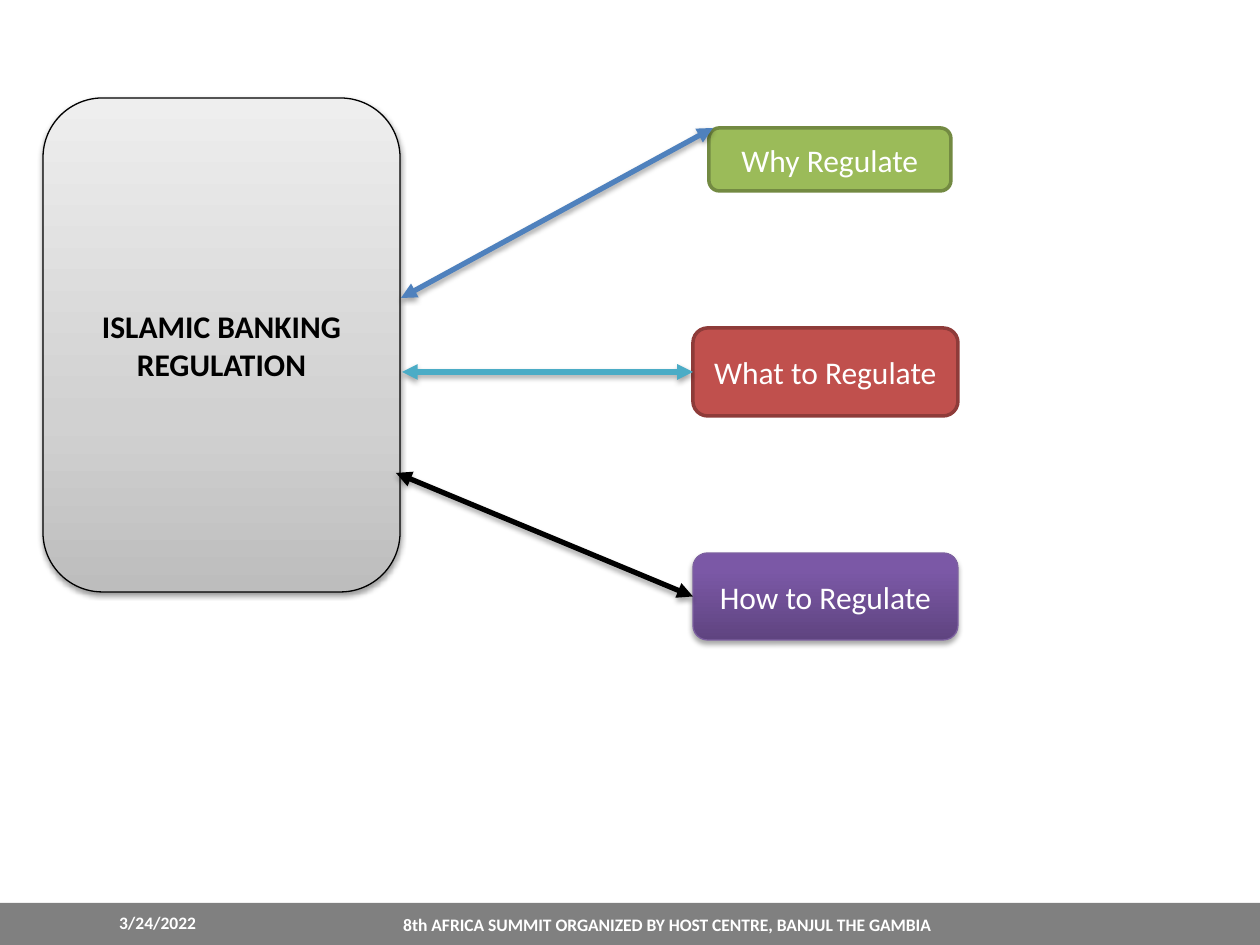
from copy import deepcopy

from lxml import etree
from pptx import Presentation
from pptx import util as u
from pptx.dml.color import RGBColor
from pptx.enum import shapes, text
from pptx.oxml.ns import qn

PX = 914400 // 126  # one px in EMU
FONT = "Calibri"
COLORS = {
    "white": "FFFFFF", "black": "000000", "footer": "808080",
    "green": "9BBB59", "green edge": "738A42",
    "red": "C0504D", "red edge": "8E3B39", "purple edge": "7D60A0",
    "blue": "4F81BD", "teal": "4BACC6",
}
# Gradients run from bottom to top: (position in percent, colour)
GREY_BLEND = [(0, "BDBDBD"), (35, "D1D1D1"), (100, "EEEEEE")]
PURPLE_BLEND = [(0, "5F4480"), (80, "7B58A6"), (100, "7C57A8")]

# Content: text, (left, top, width, height), fill, edge, edge pt, text colour, bold, shadow
TOPIC = ("ISLAMIC BANKING REGULATION", (43, 98, 357, 494), GREY_BLEND,
         "black", 0.75, "black", True, (38, 1.6))
QUESTIONS = [
    ("Why Regulate", (709, 128, 242, 63), "green", "green edge", 2, "white", False, None),
    ("What to Regulate", (693, 328, 265, 88), "red", "red edge", 2, "white", False, None),
    ("How to Regulate", (693, 553, 265, 87), PURPLE_BLEND, "purple edge", 0.75,
     "white", False, (35, 1.8)),
]
# Colour, start, end, index of the question joined at its left side
ARROWS = [
    ("blue", (401, 298), (713, 128), None),
    ("teal", (402, 372), (693, 372), 1),
    ("black", (396, 473), (693, 596), 2),
]
FOOTER_BAR = (0, 903, 1260, 42)
FOOTERS = [
    ("3/24/2022", (42, 906, 231, 32)),
    ("8th AFRICA SUMMIT ORGANIZED BY HOST CENTRE, BANJUL THE GAMBIA", (284, 908, 766, 29)),
]


def rgb(name):
    return RGBColor.from_string(COLORS.get(name, name))


def emu(lengths):
    return [length * PX for length in lengths]


def write(box, words, size, color, bold):
    frame = box.text_frame
    frame.word_wrap = True
    para = frame.paragraphs[0]
    para.alignment = text.PP_ALIGN.CENTER
    span = para.add_run()
    span.text = words
    span.font.name, span.font.size, span.font.bold = FONT, u.Pt(size), bold
    span.font.color.rgb = rgb(color)


def set_fill(box, fill):
    if isinstance(fill, str):
        box.fill.solid()
        box.fill.fore_color.rgb = rgb(fill)
        return
    box.fill.gradient()
    box.fill.gradient_angle = 90
    stop_list = box.fill.gradient_stops
    first = next(box._element.iter(qn("a:gs")))
    for _ in range(len(fill) - len(stop_list)):
        first.addnext(deepcopy(first))
    for stop, (position, color) in zip(box.fill.gradient_stops, fill):
        stop.position = position / 100
        stop.color.rgb = rgb(color)


def add_shadow(properties, opacity, distance):
    effects = properties.find(qn("a:effectLst"))
    if effects is None:
        effects = etree.SubElement(properties, qn("a:effectLst"))
    shadow = etree.SubElement(effects, qn("a:outerShdw"), blurRad=str(u.Pt(3.1)),
                              dist=str(u.Pt(distance)), dir="5400000", rotWithShape="0")
    color = etree.SubElement(shadow, qn("a:srgbClr"), val=COLORS["black"])
    etree.SubElement(color, qn("a:alpha"), val=str(opacity * 1000))


def add_box(page, words, place, fill, edge, weight, color, bold, shadow):
    box = page.shapes.add_shape(shapes.MSO_SHAPE.ROUNDED_RECTANGLE, *emu(place))
    box.shadow.inherit = False
    set_fill(box, fill)
    box.line.color.rgb = rgb(edge)
    box.line.width = u.Pt(weight)
    if shadow:
        add_shadow(box._element.spPr, *shadow)
    box.text_frame.vertical_anchor = text.MSO_ANCHOR.MIDDLE
    write(box, words, 18, color, bold)
    return box


def add_arrow(page, color, start, end, target):
    arrow = page.shapes.add_connector(shapes.MSO_CONNECTOR.STRAIGHT, *emu(start + end))
    if target is not None:
        arrow.end_connect(target, 1)
    arrow.line.color.rgb = rgb(color)
    arrow.line.width = u.Pt(3)
    line = arrow.line._get_or_add_ln()
    for tip in ("a:headEnd", "a:tailEnd"):
        etree.SubElement(line, qn(tip), type="triangle")
    add_shadow(arrow._element.spPr, 35, 1.8)


def main():
    deck = Presentation()
    deck.slide_width, deck.slide_height = emu((1260, 945))
    page = deck.slides.add_slide(deck.slide_layouts[6])

    # Footer band
    bar = page.shapes.add_shape(shapes.MSO_SHAPE.RECTANGLE, *emu(FOOTER_BAR))
    bar.shadow.inherit = False
    set_fill(bar, "footer")
    bar.line.fill.background()
    for words, place in FOOTERS:
        write(page.shapes.add_textbox(*emu(place)), words, 10, "white", True)

    # Topic and its questions
    add_box(page, *TOPIC)
    boxes = [add_box(page, *question) for question in QUESTIONS]

    # Arrows between them
    for color, start, end, joined in ARROWS:
        add_arrow(page, color, start, end, None if joined is None else boxes[joined])

    deck.save("out.pptx")


if __name__ == "__main__":
    main()
